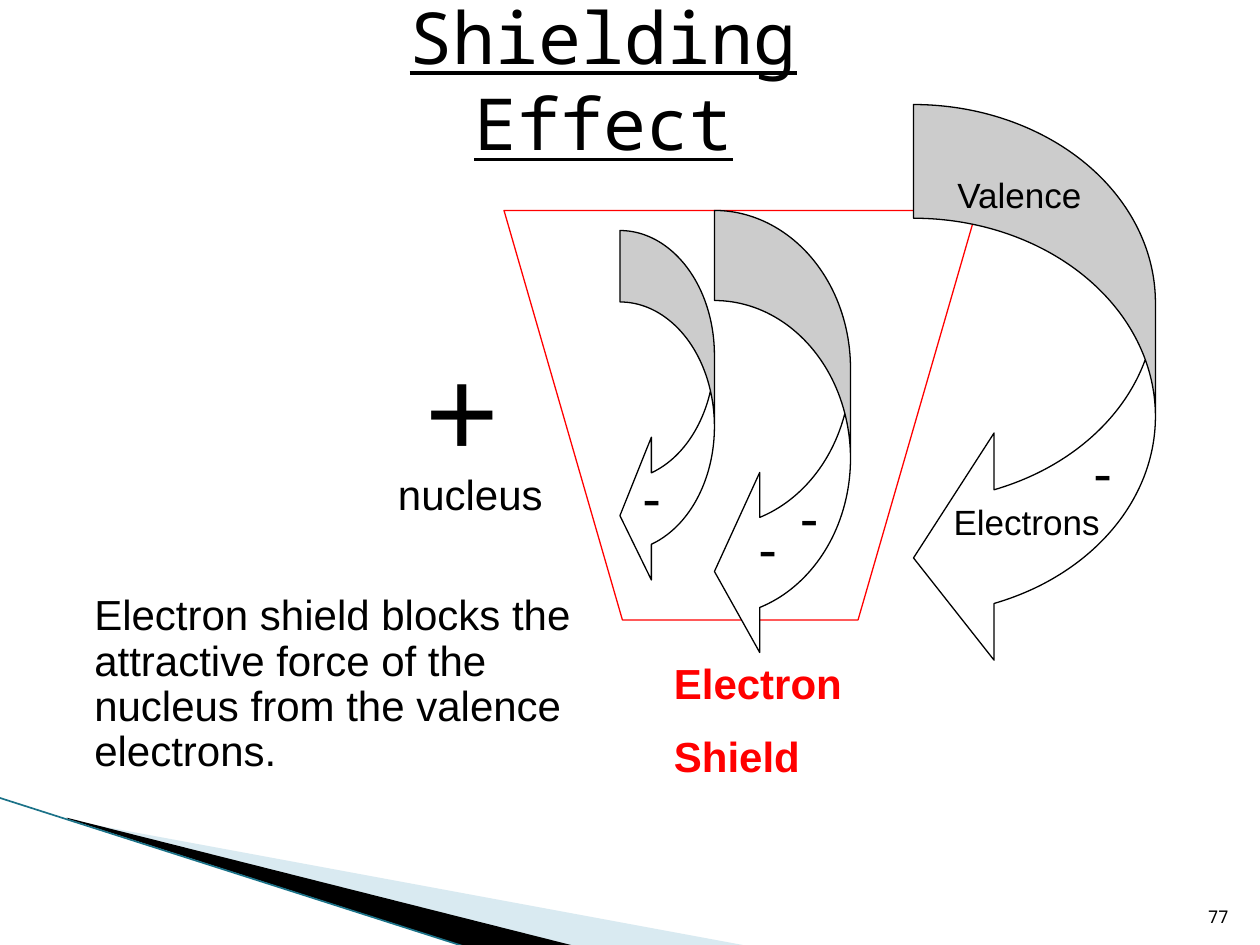
from lxml import etree
from pptx import Presentation
from pptx.dml.color import RGBColor
from pptx.enum.shapes import MSO_CONNECTOR, MSO_SHAPE
from pptx.enum.text import MSO_ANCHOR, MSO_AUTO_SIZE, PP_ALIGN
from pptx.oxml.ns import qn
from pptx.util import Inches, Pt

STRAIGHT = MSO_CONNECTOR.STRAIGHT
CURVED_ARROW = MSO_SHAPE.CURVED_LEFT_ARROW
TOP, MIDDLE, BOTTOM = MSO_ANCHOR.TOP, MSO_ANCHOR.MIDDLE, MSO_ANCHOR.BOTTOM
LEFT, CENTER, RIGHT = PP_ALIGN.LEFT, PP_ALIGN.CENTER, PP_ALIGN.RIGHT
NO_FIT, GROW = MSO_AUTO_SIZE.NONE, MSO_AUTO_SIZE.SHAPE_TO_FIT_TEXT

BLACK = RGBColor(0x00, 0x00, 0x00)
WHITE = RGBColor(0xFF, 0xFF, 0xFF)
RED = RGBColor(0xFF, 0x00, 0x00)
PALE_BLUE = RGBColor(0xA0, 0xCB, 0xDC)
TEAL = RGBColor(0x1B, 0x72, 0x88)

SANS = "Arial"
MONO = "Noto Sans Mono"

SHELLS = [
    ((7.25, 0.83, 1.92, 4.5), (0.47, 0.939, 0.333)),
    ((5.67, 1.67, 1.08, 3.58), (0.662, 1.323, 0.333)),
    ((4.92, 1.83, 0.75, 2.83), (0.756, 1.511, 0.333)),
]
LABELS = [
    ("+", (3.28, 2.58, 0.78, 1.3), 72),
    ("nucleus", (3.06, 3.67, 1.35, 0.5), 24),
    ("Valence", (7.5, 1.33, 1.21, 0.43), 20),
    ("Electrons", (7.47, 3.92, 1.36, 0.43), 20),
]
ELECTRONS = [(8.58, 3.42), (5, 3.62), (5.92, 4.03), (6.25, 3.78)]


def place(sp, box):
    sp.left, sp.top, sp.width, sp.height = map(Inches, box)


def write(sp, text, size=24, font=SANS, color=BLACK, bold=False, underline=False,
          align=LEFT, anchor=TOP, wrap=True, fit=NO_FIT, before=0, spacing=1.0, indent=0):
    tf = sp.text_frame
    tf.word_wrap = wrap
    tf.auto_size = fit
    tf.vertical_anchor = anchor
    for i, line in enumerate(text.split("\n")):
        p = tf.add_paragraph() if i else tf.paragraphs[0]
        p.alignment = align
        p.line_spacing = spacing
        p.space_before = Pt(before if i else 0)
        if indent:
            p._p.get_or_add_pPr().set("marL", str(Inches(indent)))
        r = p.add_run()
        r.text = line
        f = r.font
        f.name, f.size, f.bold, f.underline = font, Pt(size), bold, underline
        f.color.rgb = color


def add_text(s, text, box, **fmt):
    sp = s.shapes.add_textbox(*map(Inches, box))
    write(sp, text, **fmt)


def style(sp, fill, line=None, alpha=None):
    sp.shadow.inherit = False
    sp.fill.solid()
    sp.fill.fore_color.rgb = fill
    if alpha is not None:
        color = sp._element.spPr.find(".//" + qn("a:srgbClr"))
        etree.SubElement(color, qn("a:alpha"), val=str(alpha * 1000))
    if line is None:
        sp.line.fill.background()
    else:
        sp.line.color.rgb = line
        sp.line.width = Pt(0.75)


def add_polygon(s, points, fill, **look):
    start, *rest = [(Inches(x), Inches(y)) for x, y in points]
    builder = s.shapes.build_freeform(*start)
    builder.add_line_segments(rest, close=True)
    style(builder.convert_to_shape(), fill, **look)


def add_line(s, start, end, color, width):
    c = s.shapes.add_connector(STRAIGHT, *map(Inches, start + end))
    c.line.color.rgb = color
    c.line.width = Pt(width)
    etree.SubElement(c._element.spPr, qn("a:effectLst"))


def add_shell(s, box, adjustments):
    sp = s.shapes.add_shape(CURVED_ARROW, *map(Inches, box))
    for i, value in enumerate(adjustments):
        sp.adjustments[i] = value
    style(sp, WHITE, line=BLACK)


def add_corner(s):
    add_polygon(s, [(0.55, 6.51), (5.95, 7.51), (4.56, 7.51), (0.55, 6.5)],
                PALE_BLUE, alpha=40)
    add_polygon(s, [(0.53, 6.49), (4.57, 7.51), (3.72, 7.52), (0.54, 6.5)], BLACK)
    add_line(s, (-0.01, 6.33), (3.71, 7.52), TEAL, 0.95)


def main():
    prs = Presentation()
    prs.slide_width, prs.slide_height = Inches(10), Inches(7.5)
    s = prs.slides.add_slide(prs.slide_layouts[5])

    add_corner(s)
    title = s.shapes.title
    place(title, (2.33, 0, 4.92, 1.25))
    write(title, "Shielding Effect", size=41, font=MONO, underline=True,
          align=CENTER, anchor=MIDDLE)
    add_text(s, "Electron shield blocks the attractive force of the nucleus "
             "from the valence electrons.", (0.25, 4.67, 4.39, 1.67),
             spacing=0.9, indent=0.4)

    add_polygon(s, [(4, 1.67), (4.94, 4.92), (6.81, 4.92), (7.75, 1.67)],
                WHITE, line=RED)
    for box, adjustments in SHELLS:
        add_shell(s, box, adjustments)
    for text, box, size in LABELS:
        add_text(s, text, box, size=size, wrap=False, fit=GROW)
    for x, y in ELECTRONS:
        add_text(s, "-", (x, y, 0.35, 0.63), size=32, wrap=False, fit=GROW)

    add_text(s, "Electron\nShield", (5.25, 5.17, 1.75, 1.1), color=RED,
             bold=True, before=13, fit=GROW)
    add_text(s, "77", (9.33, 7.01, 0.52, 0.4), size=10, font=MONO,
             align=RIGHT, anchor=BOTTOM)
    prs.save("out.pptx")


if __name__ == "__main__":
    main()
